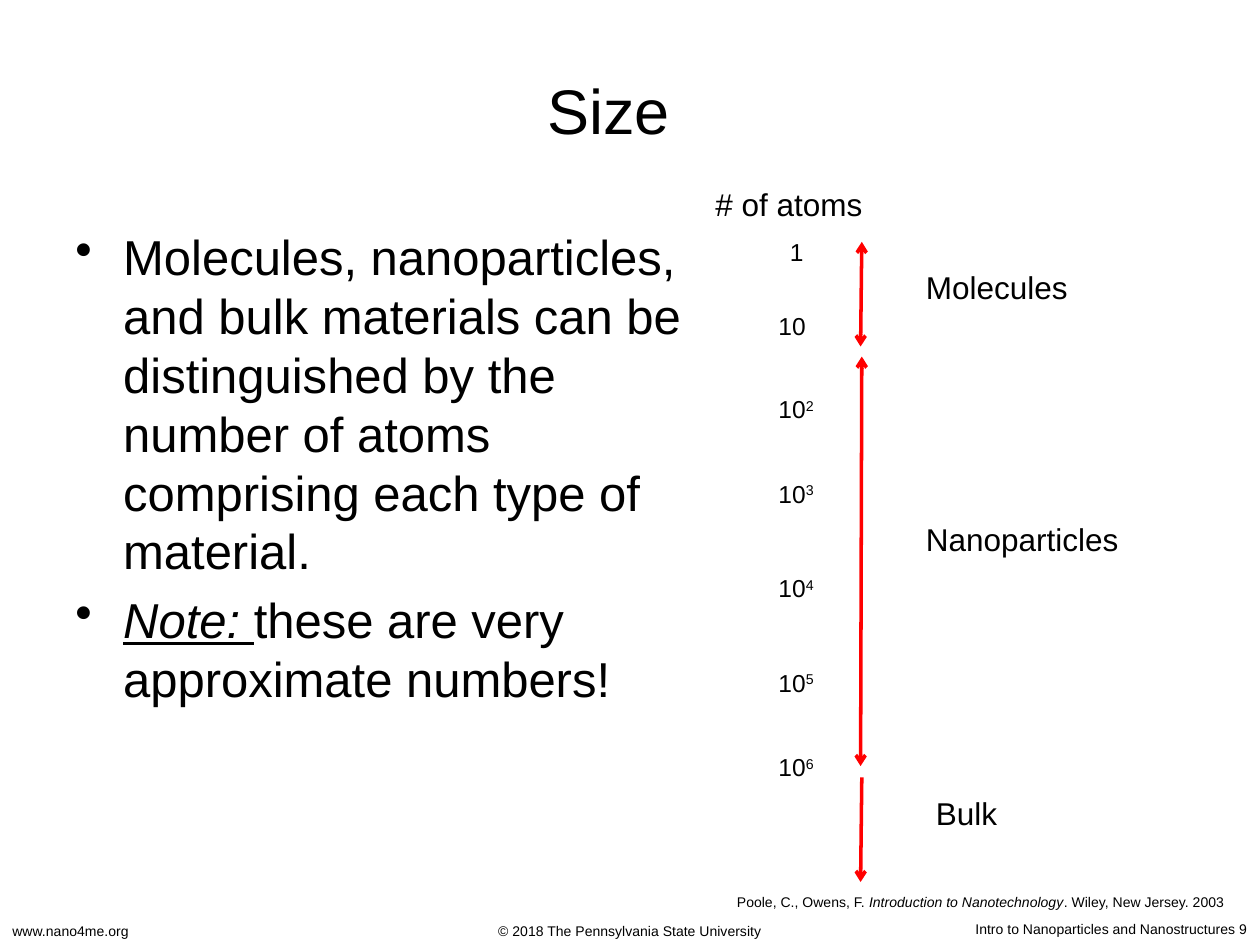
"""Build the slide on particle size by number of atoms."""
from lxml.etree import SubElement
from pptx import Presentation
from pptx.dml.color import RGBColor
from pptx.enum.shapes import MSO_CONNECTOR as Connector
from pptx.enum.text import MSO_ANCHOR as Anchor, PP_ALIGN as Align
from pptx.oxml.ns import qn
from pptx.util import Inches, Pt

BLACK = RGBColor(0, 0, 0)
RED = RGBColor(255, 0, 0)

TITLE = "Size"
POINTS = [
    [("Molecules, nanoparticles, and bulk materials can be distinguished by "
      "the number of atoms comprising each type of material.", {})],
    [("Note: ", {"italic": True, "underline": True}),
     ("these are very approximate numbers!", {})],
]
CITATION = [
    ("Poole, C., Owens, F. ", {}),
    ("Introduction to Nanotechnology", {"italic": True}),
    (". Wiley, New Jersey. 2003", {}),
]
FOOTERS = [
    ("www.nano4me.org", Align.LEFT, 7.27),
    ("© 2018 The Pennsylvania State University", Align.CENTER, 7.27),
    ("Intro to Nanoparticles and Nanostructures 9", Align.RIGHT, 7.26),
]
SCALE = [
    ("1", "", 6.17, 1.83), ("10", "", 6.08, 2.42),
    ("10", "2", 6.08, 3.08), ("10", "3", 6.08, 3.75),
    ("10", "4", 6.08, 4.5), ("10", "5", 6.08, 5.25),
    ("10", "6", 6.08, 5.92),
]
LABELS = [
    ("# of atoms", 5.58, 1.42, 1.38),
    ("Molecules", 7.25, 2.08, 1.34),
    ("Nanoparticles", 7.25, 4.08, 1.74),
    ("Bulk", 7.33, 6.25, 0.69),
]
RANGES = [
    (1.92, 2.75, ("headEnd", "tailEnd")),
    (2.83, 6.08, ("headEnd", "tailEnd")),
    (6.17, 7, ("tailEnd",)),
]


def add_text(slide, box, paragraphs, size, align=Align.LEFT, wrap=True,
             anchor=Anchor.TOP, bullet=False):
    frame = slide.shapes.add_textbox(*map(Inches, box)).text_frame
    frame.word_wrap = wrap
    frame.vertical_anchor = anchor
    for index, runs in enumerate(paragraphs):
        paragraph = frame.add_paragraph() if index else frame.paragraphs[0]
        paragraph.alignment = align
        if bullet:
            properties = paragraph._p.get_or_add_pPr()
            properties.set("marL", str(Inches(0.38)))
            properties.set("indent", str(Inches(-0.38)))
            SubElement(properties, qn("a:buChar")).set("char", "•")
        if index:
            paragraph.space_before = Pt(size * 0.2)
        for words, style in runs:
            run = paragraph.add_run()
            run.text = words
            run.font.color.rgb = BLACK
            for key, value in {"name": "Arial", "size": Pt(size), **style}.items():
                if key == "baseline":
                    run._r.get_or_add_rPr().set(key, value)
                else:
                    setattr(run.font, key, value)


def add_range(slide, top, bottom, ends):
    arrow = slide.shapes.add_connector(
        Connector.STRAIGHT,
        Inches(6.84), Inches(top), Inches(6.83), Inches(bottom))
    arrow.line.color.rgb = RED
    arrow.line.width = Pt(2)
    line = arrow.line._get_or_add_ln()
    for end in ends:
        SubElement(line, qn(f"a:{end}")).set("type", "arrow")
    SubElement(arrow._element.spPr, qn("a:effectLst"))


def main():
    deck = Presentation()
    deck.slide_width, deck.slide_height = Inches(10), Inches(7.5)
    slide = deck.slides.add_slide(deck.slide_layouts[6])
    for words, align, top in FOOTERS:
        add_text(slide, (0, top, 10, 0.24), [[(words, {})]], 8, align)
    add_text(slide, (0.33, 0.33, 9, 1.08), [[(TITLE, {})]], 36,
             Align.CENTER, anchor=Anchor.MIDDLE)
    add_text(slide, (0.5, 1.75, 5.33, 3.75), POINTS, 28, bullet=True)
    add_text(slide, (5.75, 7.04, 4.18, 0.23), [CITATION], 8)
    for extent in RANGES:
        add_range(slide, *extent)
    for base, power, left, top in SCALE:
        runs = [(base, {})]
        if power:
            runs.append((power, {"baseline": "30000"}))
        width = 0.49 if power else 0.2 + 0.11 * len(base)
        add_text(slide, (left, top, width, 0.34), [runs], 14, wrap=False)
    for words, left, top, width in LABELS:
        add_text(slide, (left, top, width, 0.4), [[(words, {})]], 18, wrap=False)
    deck.save("out.pptx")


if __name__ == "__main__":
    main()
